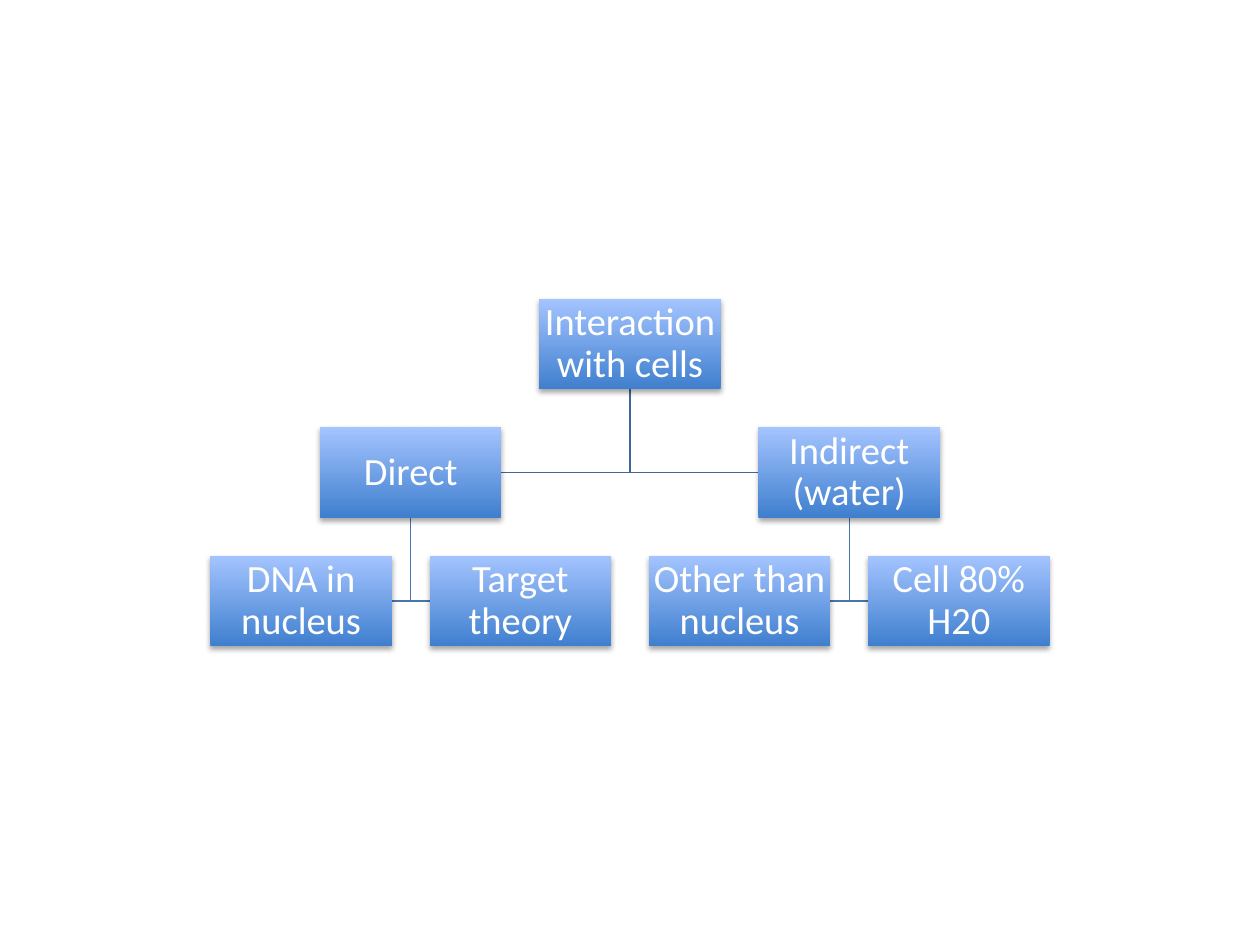
from lxml import etree
from pptx import Presentation
from pptx.dml.color import RGBColor
from pptx.enum import shapes, text
from pptx.oxml import ns
from pptx.util import Inches, Pt


def rgb(value):
    return RGBColor.from_string(value)


def add_shadow(sp):
    sp.shadow.inherit = False
    effects = sp._element.spPr.find(ns.qn("a:effectLst"))
    shadow = etree.SubElement(effects, ns.qn("a:outerShdw"), blurRad=str(Pt(3.1)),
                              dist=str(Pt(1.8)), dir="5400000", rotWithShape="0")
    color = etree.SubElement(shadow, ns.qn("a:srgbClr"), val="000000")
    etree.SubElement(color, ns.qn("a:alpha"), val="35000")


prs = Presentation()
prs.slide_width, prs.slide_height = Inches(10), Inches(7.5)
s = prs.slides.add_slide(prs.slide_layouts[6])

# Tree layout: columns count in sibling steps from the centre of the slide
BOX_W, BOX_H = 1.44, 0.72
STEP_X, STEP_Y = 1.74, 1.02
CENTER_X, TOP = 5, 2.37

# label, column, level, index of parent
nodes = [
    ("Interaction with cells", 0, 0, None),
    ("Direct", -1, 1, 0),
    ("DNA in nucleus", -1.5, 2, 1),
    ("Target theory", -0.5, 2, 1),
    ("Indirect (water)", 1, 1, 0),
    ("Other than nucleus", 0.5, 2, 4),
    ("Cell 80% H20", 1.5, 2, 4),
]
line_colors = {1: "3F6797", 2: "4875AC"}

# Elbow lines from the bottom of each parent to the near side of the child
for label, column, level, parent in reversed(nodes):
    if parent is None:
        continue
    parent_column = nodes[parent][1]
    x = CENTER_X + parent_column * STEP_X
    side = 1 if column > parent_column else -1
    child_edge = CENTER_X + column * STEP_X - side * BOX_W / 2
    y = TOP + (level - 1) * STEP_Y + BOX_H
    child_middle = TOP + level * STEP_Y + BOX_H / 2
    builder = s.shapes.build_freeform(Inches(x), Inches(y))
    builder.add_line_segments([(Inches(x), Inches(child_middle)),
                               (Inches(child_edge), Inches(child_middle))], close=False)
    sp = builder.convert_to_shape()
    sp.fill.background()
    sp.line.color.rgb = rgb(line_colors[level])
    sp.line.width = Pt(0.75)
    sp.shadow.inherit = False

# Boxes
for label, column, level, parent in nodes:
    sp = s.shapes.add_shape(shapes.MSO_SHAPE.RECTANGLE,
                            Inches(CENTER_X + column * STEP_X - BOX_W / 2),
                            Inches(TOP + level * STEP_Y), Inches(BOX_W), Inches(BOX_H))
    sp.fill.gradient()
    sp.fill.gradient_angle = 90
    for stop, color in zip(sp.fill.gradient_stops, ("3F7FCE", "A4C4FF")):
        stop.color.rgb = rgb(color)
    sp.line.fill.background()
    add_shadow(sp)

    tf = sp.text_frame
    tf.text = label
    tf.word_wrap = True
    tf.vertical_anchor = text.MSO_ANCHOR.MIDDLE
    tf.margin_left = tf.margin_right = tf.margin_top = tf.margin_bottom = Inches(0.02)
    p = tf.paragraphs[0]
    p.alignment = text.PP_ALIGN.CENTER
    p.line_spacing = 0.9
    font = p.runs[0].font
    font.name, font.size = "Calibri", Pt(22)
    font.color.rgb = rgb("FFFFFF")

prs.save("out.pptx")
